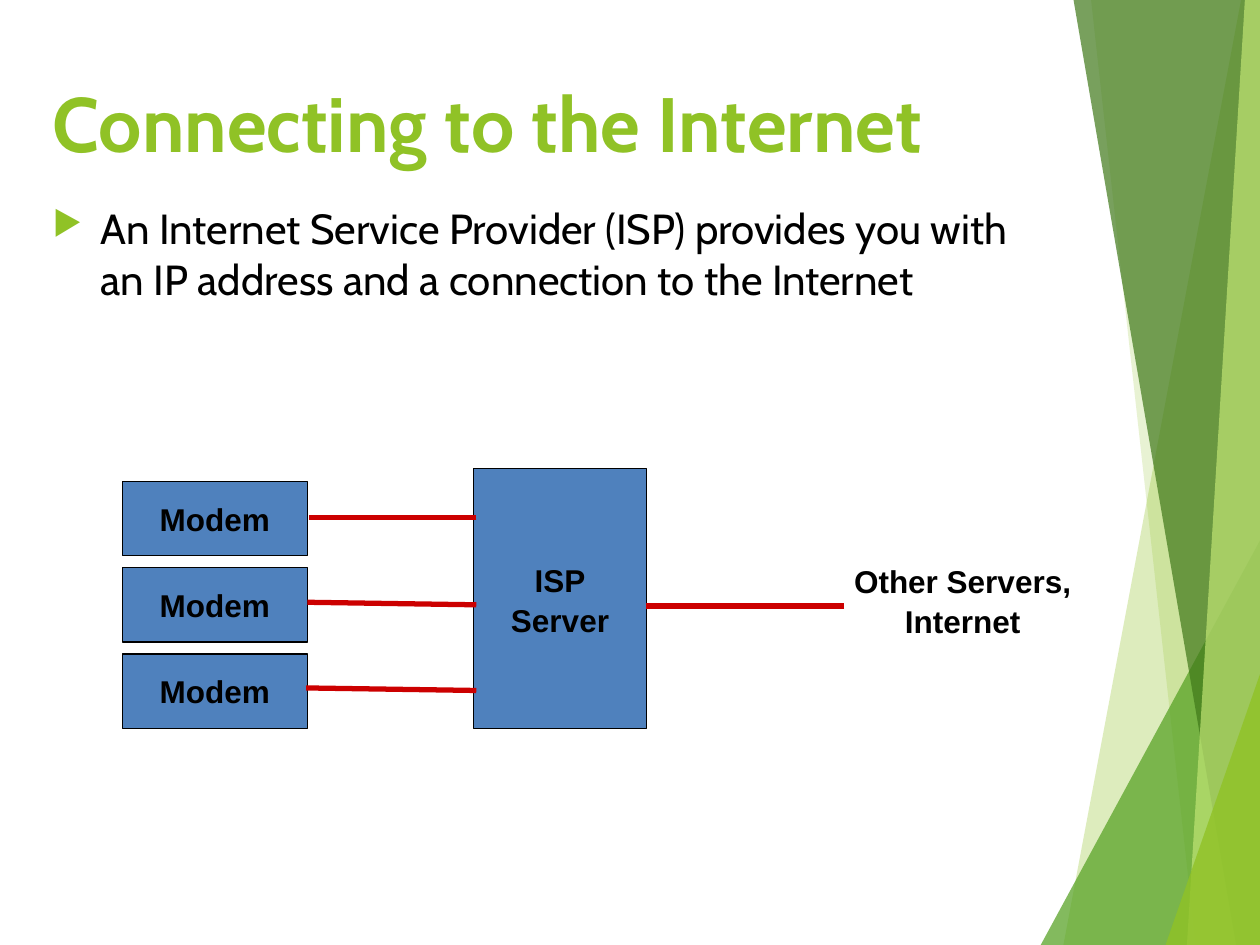
from lxml import etree
from pptx import Presentation
from pptx.dml.color import RGBColor
from pptx.enum.shapes import MSO_CONNECTOR, MSO_SHAPE
from pptx.enum.text import MSO_ANCHOR, PP_ALIGN
from pptx.oxml.ns import qn
from pptx.util import Inches, Pt


def color(hex_value):
    return RGBColor.from_string(hex_value)


def write_text(shape, text, font_format, anchor, align, wrap):
    frame = shape.text_frame
    frame.word_wrap = wrap
    frame.vertical_anchor = anchor
    paragraph = frame.paragraphs[0]
    paragraph.text = text
    paragraph.alignment = align
    for run in paragraph.runs:
        for name, value in font_format.items():
            if name == "color":
                run.font.color.rgb = color(value)
            else:
                setattr(run.font, name, value)
    return paragraph


GREEN = "90C226"
TITLE_FONT = {"name": "Cabin", "size": Pt(44), "bold": True, "color": GREEN}
BODY_FONT = {"name": "Cabin", "size": Pt(24), "color": "000000"}
LABEL_FONT = {"name": "Arial", "size": Pt(18), "bold": True, "color": "000000"}

presentation = Presentation()
presentation.slide_width = Inches(10)
presentation.slide_height = Inches(7.5)
slide = presentation.slides.add_slide(presentation.slide_layouts[6])
shapes = slide.shapes

# Translucent facets along the right edge: corners, colour, opacity in percent
facets = [
    ([(9.85, 0), (8.44, 7.5), (10, 7.5), (10, 0)], GREEN, 30),
    ([(8.66, 0), (9.49, 7.5), (10, 7.5), (10, 0)], GREEN, 20),
    ([(8.26, 7.5), (10, 4.29), (10, 7.5)], "54A021", 72),
    ([(8.52, 0), (9.81, 7.5), (10, 7.5), (10, 0)], "3F7819", 70),
    ([(9.88, 0), (9.42, 7.5), (10, 7.5), (10, 0)], "C0E474", 70),
    ([(9.25, 7.5), (10, 5.35), (10, 7.5)], GREEN, 80),
]
for corners, fill, opacity in facets:
    points = [(Inches(x), Inches(y)) for x, y in corners]
    builder = shapes.build_freeform(*points[0])
    builder.add_line_segments(points[1:], close=True)
    facet = builder.convert_to_shape()
    facet.shadow.inherit = False
    facet.line.fill.background()
    facet.fill.solid()
    facet.fill.fore_color.rgb = color(fill)
    fill_color = facet.fill._xPr.find(qn("a:solidFill"))[0]
    etree.SubElement(fill_color, qn("a:alpha"), val=str(opacity * 1000))

# Title
title = shapes.add_textbox(Inches(0.32), Inches(0.37), Inches(7.94), Inches(1.19))
write_text(title, "Connecting to the Internet", TITLE_FONT,
           MSO_ANCHOR.MIDDLE, PP_ALIGN.LEFT, True)

# Bulleted body text
body = shapes.add_textbox(Inches(0.32), Inches(1.56), Inches(7.94), Inches(5.24))
paragraph = write_text(
    body,
    "An Internet Service Provider (ISP) provides you with an IP address "
    "and a connection to the Internet",
    BODY_FONT, MSO_ANCHOR.TOP, PP_ALIGN.LEFT, True)
properties = paragraph._p.get_or_add_pPr()
properties.set("marL", str(Inches(0.38)))
properties.set("indent", str(Inches(-0.38)))
bullet_color = etree.SubElement(properties, qn("a:buClr"))
etree.SubElement(bullet_color, qn("a:srgbClr"), val=GREEN)
etree.SubElement(properties, qn("a:buSzPct"), val="80000")
etree.SubElement(properties, qn("a:buChar"), char="▶")

# Modems and the ISP server
boxes = [("Modem", 0.97, 3.82 + 0.685 * row, 1.47, 0.59) for row in range(3)]
boxes.append(("ISP\nServer", 3.76, 3.72, 1.37, 2.06))
for label, left, top, width, height in boxes:
    box = shapes.add_shape(MSO_SHAPE.RECTANGLE, Inches(left), Inches(top),
                           Inches(width), Inches(height))
    box.shadow.inherit = False
    box.fill.solid()
    box.fill.fore_color.rgb = color("4F81BD")
    box.line.color.rgb = color("000000")
    box.line.width = Pt(0.75)
    paragraph = write_text(box, label, LABEL_FONT,
                           MSO_ANCHOR.MIDDLE, PP_ALIGN.CENTER, False)
    if "\n" in label:
        paragraph.line_spacing = 1.06

# Red links
links = [
    (3.78, 5.48, 2.43, 5.46),
    (3.78, 4.8, 2.44, 4.78),
    (3.78, 4.11, 2.45, 4.11),
    (6.7, 4.81, 5.13, 4.81),
]
for ends in links:
    link = shapes.add_connector(MSO_CONNECTOR.STRAIGHT,
                                *[Inches(value) for value in ends])
    link.line.color.rgb = color("CC0000")
    link.line.width = Pt(3)
    etree.SubElement(link._element.spPr, qn("a:effectLst"))

# Label at the far end
outside = shapes.add_textbox(Inches(6.67), Inches(4.39), Inches(1.94), Inches(0.71))
paragraph = write_text(outside, "Other Servers,\nInternet", LABEL_FONT,
                       MSO_ANCHOR.TOP, PP_ALIGN.CENTER, False)
paragraph.line_spacing = 1.06

presentation.save("out.pptx")
